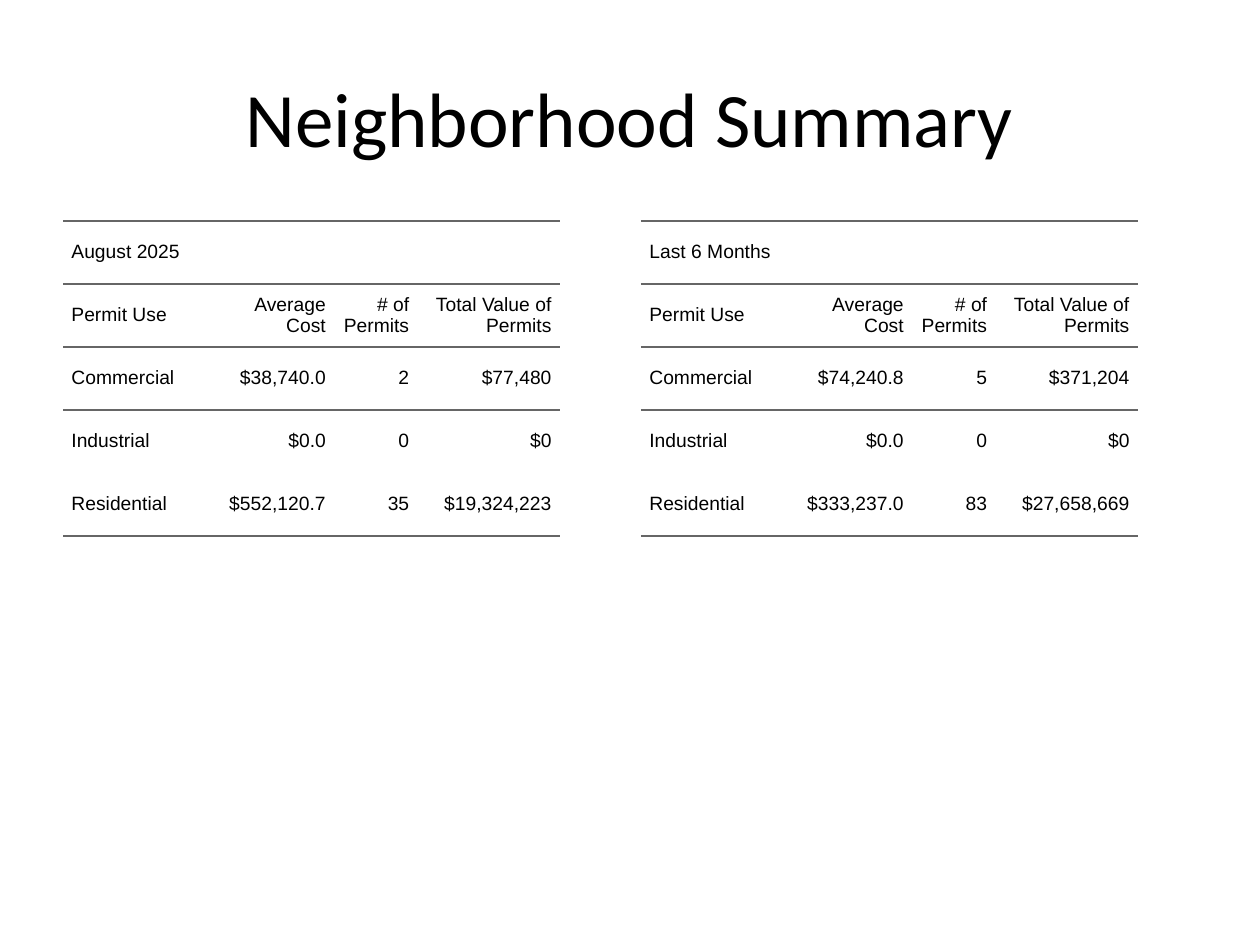
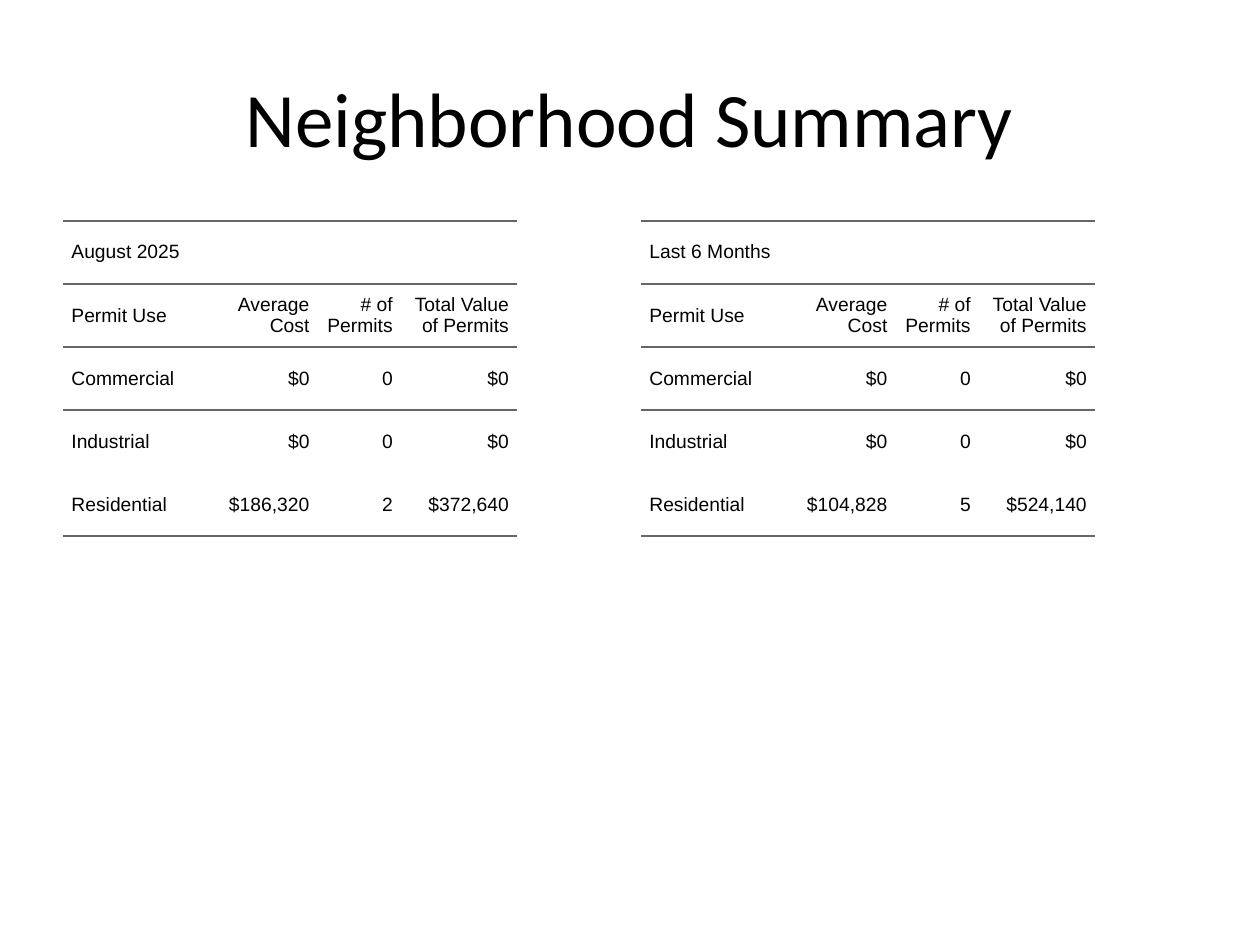
from lxml import etree
from pptx import Presentation
from pptx.dml.color import RGBColor
from pptx.enum.text import MSO_ANCHOR, PP_ALIGN
from pptx.oxml.ns import qn
from pptx.util import Cm, Pt

MIDDLE = MSO_ANCHOR.MIDDLE
LEFT, CENTER, RIGHT = PP_ALIGN.LEFT, PP_ALIGN.CENTER, PP_ALIGN.RIGHT

INK = "000000"
RULE = "666666"
PLAIN = "{2D5ABB26-0587-4C30-8999-92F81FD0307C}"
TITLE = "Neighborhood Summary"
TITLE_BOX = (1.27, 0.76, 22.86, 3.18)
TOP = 4.45
ROW = 1.27
PAD = 0.17
HEADS = ("Permit Use", "Average Cost", "# of Permits", "Total Value of Permits")
USES = ("Commercial", "Industrial", "Residential")
PERIODS = (("August 2025", 1.27), ("Last 6 Months", 12.92))

SLIDES = (
    {
        "widths": (2.8, 2.67, 1.68, 2.87),
        "values": (
            (("$38,740.0", "2", "$77,480"),
             ("$0.0", "0", "$0"),
             ("$552,120.7", "35", "$19,324,223")),
            (("$74,240.8", "5", "$371,204"),
             ("$0.0", "0", "$0"),
             ("$333,237.0", "83", "$27,658,669")),
        ),
    },
    {
        "widths": (2.8, 2.34, 1.68, 2.34),
        "values": (
            (("$0", "0", "$0"),
             ("$0", "0", "$0"),
             ("$186,320", "2", "$372,640")),
            (("$0", "0", "$0"),
             ("$0", "0", "$0"),
             ("$104,828", "5", "$524,140")),
        ),
    },
)


def color(code):
    return RGBColor.from_string(code)


def write(frame, text, size, font, align):
    frame.text = text
    para = frame.paragraphs[0]
    para.alignment = align
    for run in para.runs:
        run.font.size = Pt(size)
        run.font.name = font
        run.font.color.rgb = color(INK)


def add_title(slide, box):
    shape = slide.shapes.add_textbox(*map(Cm, box))
    frame = shape.text_frame
    frame.word_wrap = True
    frame.vertical_anchor = MIDDLE
    write(frame, TITLE, 44, "Calibri", CENTER)


def add_rule(cell, side):
    props = cell._tc.get_or_add_tcPr()
    line = etree.SubElement(props, qn(f"a:{side}"), w=str(Pt(1.5)))
    fill = etree.SubElement(line, qn("a:solidFill"))
    etree.SubElement(fill, qn("a:srgbClr"), val=RULE)


def style_cell(cell, row, last):
    cell.margin_left = cell.margin_right = Cm(PAD)
    cell.margin_top = cell.margin_bottom = Cm(PAD)
    cell.vertical_anchor = MIDDLE
    if row <= 2:
        add_rule(cell, "lnT")
    if row in (0, 1, last):
        add_rule(cell, "lnB")
    cell.fill.background()


def add_permits(slide, left, top, period, widths, values):
    rows = [(period,), HEADS]
    rows += [(use, *nums) for use, nums in zip(USES, values)]
    frame = slide.shapes.add_table(
        len(rows), len(widths), Cm(left), Cm(top),
        Cm(sum(widths)), Cm(ROW * len(rows)))
    table = frame.table
    table.first_row = table.horz_banding = False
    table._tbl.tblPr.find(qn("a:tableStyleId")).text = PLAIN
    for col, width in zip(table.columns, widths):
        col.width = Cm(width)
    for r, texts in enumerate(rows):
        table.rows[r].height = Cm(ROW)
        for c in range(len(widths)):
            style_cell(table.cell(r, c), r, len(rows) - 1)
        for c, text in enumerate(texts):
            align = RIGHT if c else LEFT
            write(table.cell(r, c).text_frame, text, 11, "Arial", align)
    table.cell(0, 0).merge(table.cell(0, len(widths) - 1))


def add_summary(deck, widths, values):
    slide = deck.slides.add_slide(deck.slide_layouts[6])
    for (period, left), nums in zip(PERIODS, values):
        add_permits(slide, left, TOP, period, widths, nums)
    add_title(slide, TITLE_BOX)


def main():
    deck = Presentation()
    deck.slide_width = Cm(25.4)
    deck.slide_height = Cm(19.05)
    for data in SLIDES:
        add_summary(deck, **data)
    deck.save("out.pptx")


if __name__ == "__main__":
    main()
